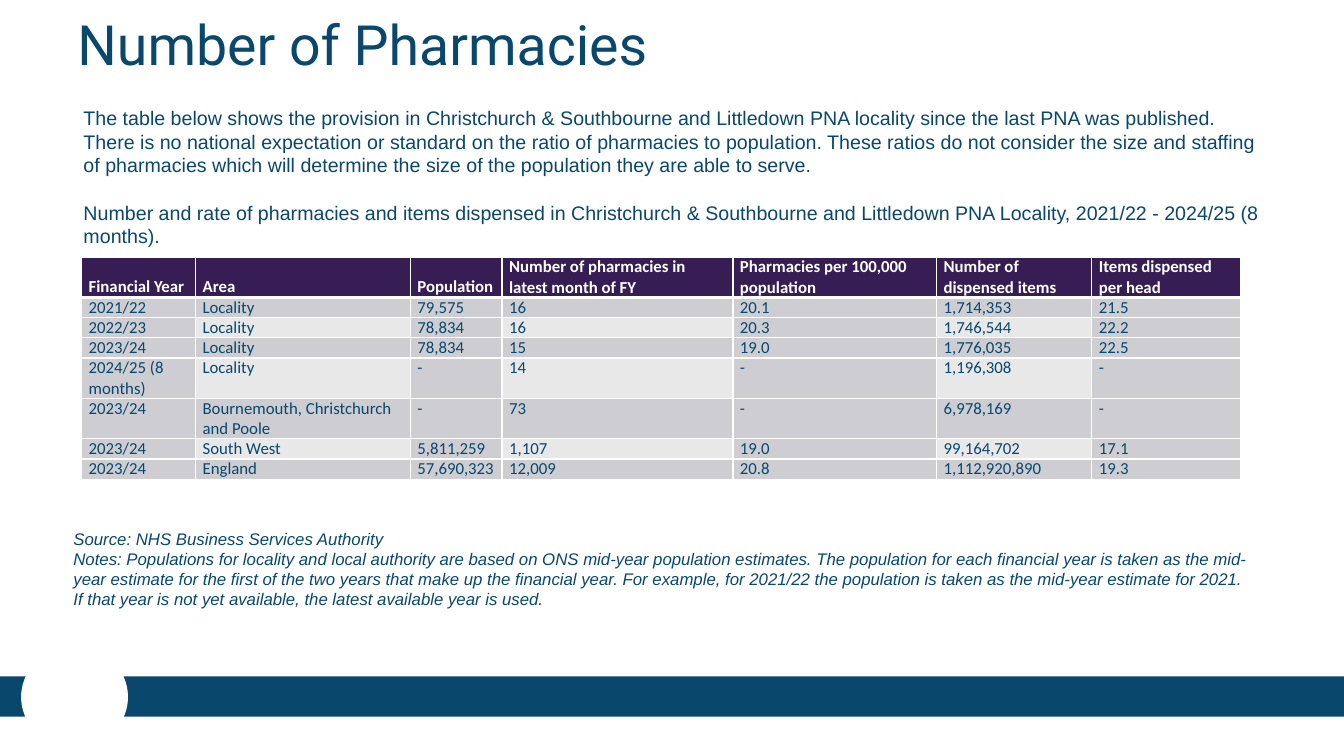
from lxml.etree import SubElement
from pptx import Presentation
from pptx.dml.color import RGBColor as Rgb
from pptx.enum.shapes import MSO_SHAPE as Shape
from pptx.enum.text import MSO_ANCHOR as Anchor, MSO_AUTO_SIZE as Auto
from pptx.oxml.ns import qn
from pptx.util import Inches, Pt

HUES = {"blue": "09476D", "plum": "361E54", "white": "FFFFFF",
        "grey": "CECDD1", "pale": "E8E8E9"}

TITLE = "Number of Pharmacies"
INTRO = [
    "The table below shows the provision in Christchurch & Southbourne and Littledown PNA "
    "locality since the last PNA was published. There is no national expectation or standard "
    "on the ratio of pharmacies to population. These ratios do not consider the size and "
    "staffing of pharmacies which will determine the size of the population they are able to "
    "serve.",
    "Number and rate of pharmacies and items dispensed in Christchurch & Southbourne and "
    "Littledown PNA Locality, 2021/22 - 2024/25 (8 months).",
]
NOTES = [
    "Source: NHS Business Services Authority",
    "Notes: Populations for locality and local authority are based on ONS mid-year population "
    "estimates. The population for each financial year is taken as the mid-year estimate for "
    "the first of the two years that make up the financial year. For example, for 2021/22 the "
    "population is taken as the mid-year estimate for 2021. If that year is not yet available, "
    "the latest available year is used.",
]
WIDTHS = [1.13, 2.13, 0.91, 2.29, 2.02, 1.54, 1.48]
ROWS = [
    ["Financial Year", "Area", "Population", "Number of pharmacies in latest month of FY",
     "Pharmacies per 100,000 population", "Number of dispensed items",
     "Items dispensed per head"],
    ["2021/22", "Locality", "79,575", "16", "20.1", "1,714,353", "21.5"],
    ["2022/23", "Locality", "78,834", "16", "20.3", "1,746,544", "22.2"],
    ["2023/24", "Locality", "78,834", "15", "19.0", "1,776,035", "22.5"],
    ["2024/25 (8 months)", "Locality", "-", "14", "-", "1,196,308", "-"],
    ["2023/24", "Bournemouth, Christchurch and Poole", "-", "73", "-", "6,978,169", "-"],
    ["2023/24", "South West", "5,811,259", "1,107", "19.0", "99,164,702", "17.1"],
    ["2023/24", "England", "57,690,323", "12,009", "20.8", "1,112,920,890", "19.3"],
]
TALL = (0, 4, 5)  # rows with two lines of text
LINE = 0.2


def hue(name):
    return Rgb.from_string(HUES[name])


def add_run(para, text, size, face="Arial", tint="blue", bold=False, italic=False):
    run = para.add_run()
    run.text = text
    font = run.font
    font.size, font.name = Pt(size), face
    font.bold, font.italic = bold, italic
    font.color.rgb = hue(tint)


def add_text(slide, box, paras, size, gap=0, auto=Auto.SHAPE_TO_FIT_TEXT, **style):
    """Place a text box; gap is the space in points between paragraphs."""
    frame = slide.shapes.add_textbox(*map(Inches, box)).text_frame
    frame.word_wrap = True
    frame.auto_size = auto
    frame.vertical_anchor = Anchor.MIDDLE
    for i, text in enumerate(paras):
        para = frame.add_paragraph() if i else frame.paragraphs[0]
        if i and gap:
            para.space_before = Pt(gap)
        add_run(para, text, size, **style)
    return frame


def add_plain(slide, kind, box, tint):
    shape = slide.shapes.add_shape(kind, *map(Inches, box))
    shape.shadow.inherit = False
    shape.fill.solid()
    shape.fill.fore_color.rgb = hue(tint)
    shape.line.fill.background()


def add_footer(slide, left, top, width, height):
    add_plain(slide, Shape.RECTANGLE, (left, top, width, height), "blue")
    add_plain(slide, Shape.OVAL, (left + 0.21, top - 0.3, 1.06, 1.01), "white")


def add_edges(cell, base):
    """Draw white cell borders, with the bottom one base points wide."""
    props = cell._tc.get_or_add_tcPr()
    for i, (side, wide) in enumerate((("L", 1), ("R", 1), ("T", 1), ("B", base))):
        edge = SubElement(props, qn(f"a:ln{side}"), w=str(Pt(wide)))
        fill = SubElement(edge, qn("a:solidFill"))
        SubElement(fill, qn("a:srgbClr"), val=HUES["white"])
        props.insert(i, edge)


def fill_cell(cell, text, row, col):
    head = row == 0
    tint = "plum" if head else "grey" if row % 2 or col % 2 == 0 else "pale"
    cell.fill.solid()
    cell.fill.fore_color.rgb = hue(tint)
    cell.margin_left = cell.margin_right = Inches(0.07)
    cell.margin_top = cell.margin_bottom = 0
    cell.vertical_anchor = Anchor.BOTTOM if head else Anchor.TOP
    add_run(cell.text_frame.paragraphs[0], text, 12, "Calibri",
            "white" if head else "blue", bold=head)
    add_edges(cell, 3 if head else 1)


def add_grid(slide, left, top):
    highs = [LINE * (2 if i in TALL else 1) for i in range(len(ROWS))]
    box = map(Inches, (left, top, sum(WIDTHS), sum(highs)))
    table = slide.shapes.add_table(len(ROWS), len(WIDTHS), *box).table
    for col, wide in zip(table.columns, WIDTHS):
        col.width = Inches(wide)
    for i, (high, texts) in enumerate(zip(highs, ROWS)):
        table.rows[i].height = Inches(high)
        for j, text in enumerate(texts):
            fill_cell(table.cell(i, j), text, i, j)


def main():
    deck = Presentation()
    deck.slide_width, deck.slide_height = Inches(13.33), Inches(7.5)
    slide = deck.slides.add_slide(deck.slide_layouts[6])
    add_footer(slide, 0, 6.71, 13.33, 0.4)
    add_text(slide, (0.73, 1, 11.87, 1.51), INTRO, 14, gap=17)
    add_text(slide, (0.63, 5.19, 11.87, 0.91), NOTES, 12, italic=True)
    title = add_text(slide, (0.67, 0.12, 8.5, 0.71), [TITLE], 39.6,
                     auto=Auto.NONE, face="Roboto")
    title.paragraphs[0].line_spacing = 0.9
    add_grid(slide, 0.81, 2.55)
    deck.save("out.pptx")


if __name__ == "__main__":
    main()
